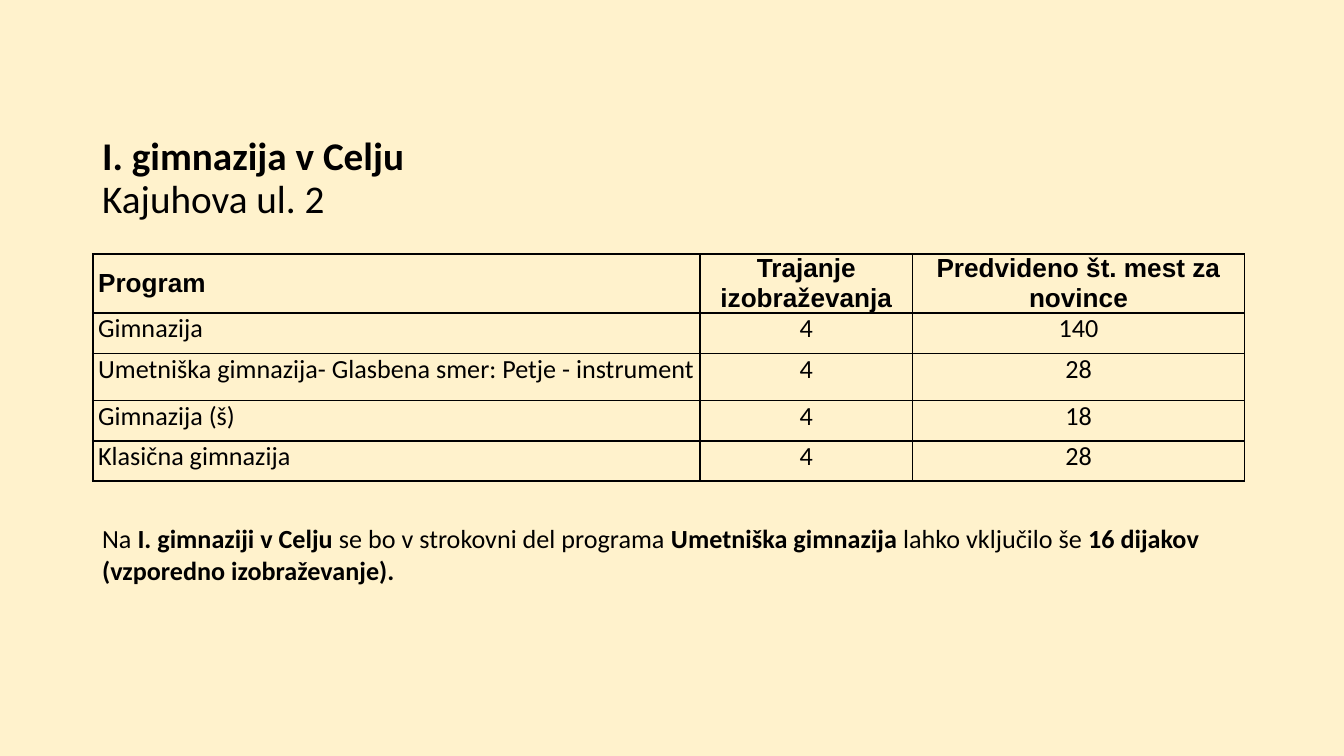
import pptx
import pptx.dml.color
import pptx.enum.text
import pptx.oxml
import pptx.oxml.ns
import pptx.util
from pptx.util import Inches

COLORS = {"background": "FFF2CC", "ink": "000000"}
INK = pptx.dml.color.RGBColor.from_string(COLORS["ink"])
ALIGN = pptx.enum.text.PP_ALIGN
ANCHOR = pptx.enum.text.MSO_ANCHOR


def set_font(font, size, name="Calibri", bold=None):
    font.size = pptx.util.Pt(size)
    font.name = name
    font.bold = bold
    font.color.rgb = INK


def set_frame(frame, anchor):
    frame.word_wrap = True
    frame.auto_size = pptx.enum.text.MSO_AUTO_SIZE.NONE
    frame.vertical_anchor = anchor
    frame.margin_left = frame.margin_right = Inches(0.07)
    frame.margin_top = frame.margin_bottom = Inches(0.04)


deck = pptx.Presentation()
deck.slide_width = Inches(10)
deck.slide_height = deck.slide_width * 9 // 16
page = deck.slides.add_slide(deck.slide_layouts[5])
page.background.fill.solid()
page.background.fill.fore_color.rgb = pptx.dml.color.RGBColor.from_string(COLORS["background"])

title = page.shapes.title
title.left, title.top = Inches(0.69), Inches(0.79)
title.width, title.height = Inches(8.62), Inches(1.09)
set_frame(title.text_frame, ANCHOR.MIDDLE)
para = title.text_frame.paragraphs[0]
para.alignment = ALIGN.LEFT
para.line_spacing = 0.9
set_font(para.font, 21)
span = para.add_run()
span.text = "I. gimnazija v Celju"
span.font.bold = True
para.add_line_break()
span = para.add_run()
span.text = "Kajuhova ul. 2"

programs = [
    ("Program", "Trajanje izobraževanja", "Predvideno št. mest za novince"),
    ("Gimnazija", "4", "140"),
    ("Umetniška gimnazija- Glasbena smer: Petje - instrument", "4", "28"),
    ("Gimnazija (š)", "4", "18"),
    ("Klasična gimnazija", "4", "28"),
]
column_widths = [4.52, 1.58, 2.47]
row_heights = [0.44, 0.3, 0.35, 0.3, 0.3]
table = page.shapes.add_table(
    len(programs), len(column_widths),
    Inches(0.69), Inches(1.89), Inches(sum(column_widths)), Inches(sum(row_heights)),
).table
for column, width in zip(table.columns, column_widths):
    column.width = Inches(width)
for row, height in zip(table.rows, row_heights):
    row.height = Inches(height)

for row_index, program in enumerate(programs):
    is_header = row_index == 0
    for column_index, text in enumerate(program):
        cell = table.cell(row_index, column_index)
        cell.text = text
        cell.margin_left = cell.margin_right = Inches(0.04)
        cell.margin_top = cell.margin_bottom = 0
        cell.vertical_anchor = ANCHOR.MIDDLE if is_header else ANCHOR.TOP
        para = cell.text_frame.paragraphs[0]
        para.alignment = ALIGN.CENTER if column_index else ALIGN.LEFT
        set_font(para.font, 14, "Arial" if is_header else "Calibri", is_header)
        properties = cell._tc.get_or_add_tcPr()
        for side in ("lnL", "lnR", "lnT", "lnB"):
            properties.append(pptx.oxml.parse_xml(
                f'<a:{side} {pptx.oxml.ns.nsdecls("a")} w="12700"><a:solidFill>'
                f'<a:srgbClr val="{COLORS["ink"]}"/></a:solidFill></a:{side}>'
            ))
        cell.fill.background()

note = page.shapes.add_textbox(Inches(0.69), Inches(3.85), Inches(8.57), Inches(0.76))
set_frame(note.text_frame, ANCHOR.TOP)
para = note.text_frame.paragraphs[0]
set_font(para.font, 14)
note_spans = [
    ("Na ", False),
    ("I. gimnaziji v Celju", True),
    (" se bo v strokovni del programa ", False),
    ("Umetniška gimnazija", True),
    (" lahko vključilo še ", False),
    ("16 dijakov (vzporedno izobraževanje).", True),
]
for text, bold in note_spans:
    span = para.add_run()
    span.text = text
    span.font.bold = bold

deck.save("out.pptx")
